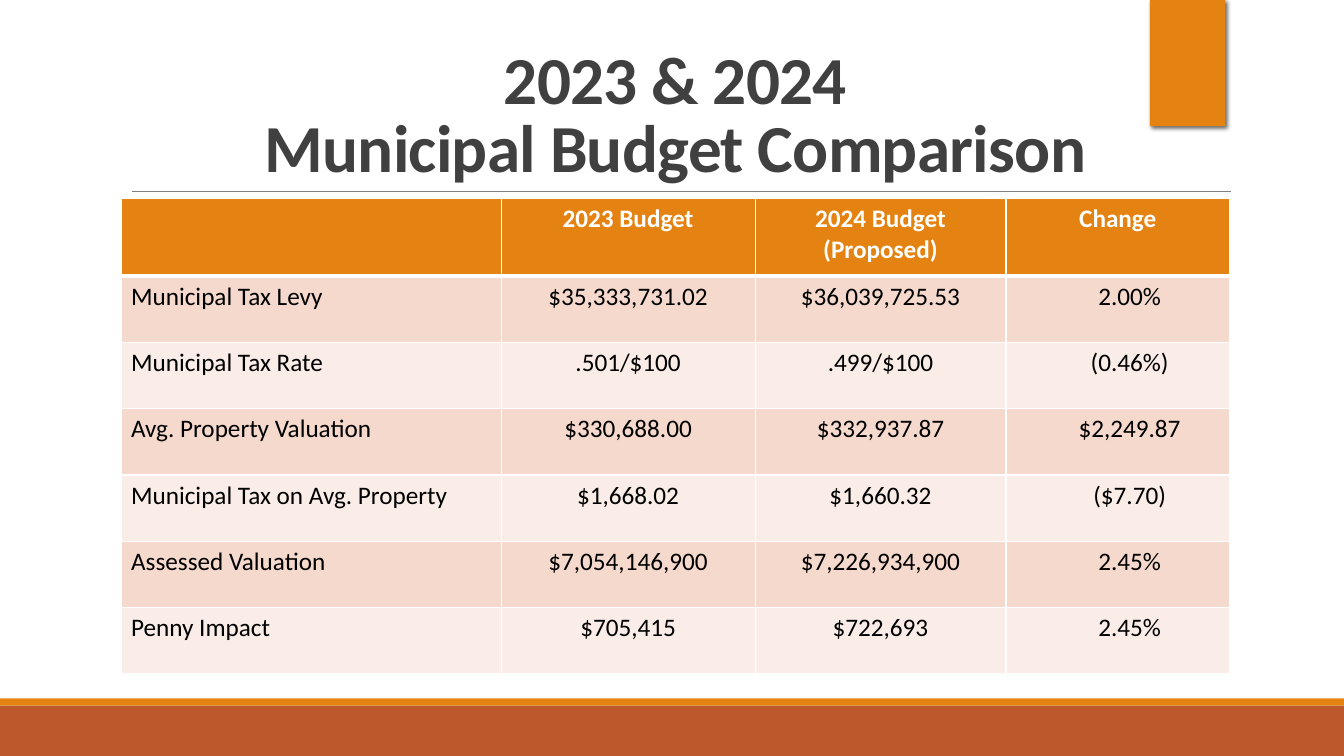
from dataclasses import dataclass

from lxml.etree import SubElement
from pptx import Presentation
from pptx.dml.color import RGBColor
from pptx.enum.shapes import MSO_CONNECTOR, MSO_SHAPE
from pptx.enum.text import MSO_ANCHOR, MSO_AUTO_SIZE, PP_ALIGN
from pptx.oxml import parse_xml
from pptx.oxml.ns import nsdecls, qn
from pptx.util import Cm, Pt


@dataclass(frozen=True)
class Theme:
    font: str = "Calibri"
    orange: str = "E48312"
    rust: str = "BD582C"
    rule: str = "808080"
    title: str = "404040"
    white: str = "FFFFFF"
    black: str = "000000"
    bands: tuple = ("F5D9CC", "FAEDE7")
    title_size: int = 48
    table_size: int = 18


theme = Theme()


def add_run(paragraph, text, size, color, bold):
    run = paragraph.add_run()
    run.text = text
    run.font.name = theme.font
    run.font.size = Pt(size)
    run.font.bold = bold
    run.font.color.rgb = RGBColor.from_string(color)
    return run


def add_border(cell, side, width):
    cell._tc.get_or_add_tcPr().append(parse_xml(
        f'<a:{side} {nsdecls("a")} w="{Pt(width)}"><a:solidFill>'
        f'<a:srgbClr val="{theme.white}"/></a:solidFill></a:{side}>'
    ))


presentation = Presentation()
presentation.slide_width = Cm(33.87)
presentation.slide_height = Cm(19.05)
slide = presentation.slides.add_slide(presentation.slide_layouts[5])

blocks = [
    (0, 17.78, 33.87, 1.27, theme.rust),
    (0, 17.6, 33.87, 0.18, theme.orange),
    (28.98, 0, 1.9, 3.18, theme.orange),
]
for left, top, width, height, color in blocks:
    block = slide.shapes.add_shape(
        MSO_SHAPE.RECTANGLE, Cm(left), Cm(top), Cm(width), Cm(height))
    block.shadow.inherit = False
    block.fill.solid()
    block.fill.fore_color.rgb = RGBColor.from_string(color)
    block.line.fill.background()

corner_tab = block
effects = corner_tab._element.spPr.find(qn("a:effectLst"))
effects.append(parse_xml(
    f'<a:outerShdw {nsdecls("a")} blurRad="{Pt(3)}" dist="{Pt(2)}" dir="2700000">'
    f'<a:srgbClr val="{theme.black}"><a:alpha val="60000"/></a:srgbClr></a:outerShdw>'
))

title_rule = slide.shapes.add_connector(
    MSO_CONNECTOR.STRAIGHT, Cm(3.33), Cm(4.83), Cm(31.01), Cm(4.83))
title_rule.line.color.rgb = RGBColor.from_string(theme.rule)
title_rule.line.width = Pt(0.5)
SubElement(title_rule._element.spPr, qn("a:effectLst"))

title = slide.shapes.title
title.left, title.top, title.width, title.height = Cm(3.05), Cm(0.79), Cm(27.94), Cm(4.04)
title.text_frame.auto_size = MSO_AUTO_SIZE.NONE
title.text_frame.word_wrap = True
title.text_frame.vertical_anchor = MSO_ANCHOR.BOTTOM
paragraph = title.text_frame.paragraphs[0]
paragraph.alignment = PP_ALIGN.CENTER
paragraph.line_spacing = 0.85
for index, text in enumerate(["2023 & 2024", "Municipal Budget Comparison"]):
    if index:
        paragraph.add_line_break()
    run = add_run(paragraph, text, theme.title_size, theme.title, True)
    run.font._element.set("spc", "-50")

rows = [
    ["", "2023 Budget", "2024 Budget\n(Proposed)", "Change"],
    ["Municipal Tax Levy", "$35,333,731.02", "$36,039,725.53", "2.00%"],
    ["Municipal Tax Rate", ".501/$100", ".499/$100", "(0.46%)"],
    ["Avg. Property Valuation", "$330,688.00", "$332,937.87", "$2,249.87"],
    ["Municipal Tax on Avg. Property", "$1,668.02", "$1,660.32", "($7.70)"],
    ["Assessed Valuation", "$7,054,146,900", "$7,226,934,900", "2.45%"],
    ["Penny Impact", "$705,415", "$722,693", "2.45%"],
]
column_widths = [9.58, 6.4, 6.32, 5.64]
header_height, row_height = 1.96, 1.67
change_column = len(column_widths) - 1

table = slide.shapes.add_table(
    len(rows), len(column_widths), Cm(3.05), Cm(5), Cm(sum(column_widths)),
    Cm(header_height + row_height * (len(rows) - 1))).table
for column, width in zip(table.columns, column_widths):
    column.width = Cm(width)

for row_index, values in enumerate(rows):
    is_header = row_index == 0
    table.rows[row_index].height = Cm(header_height if is_header else row_height)
    fill_color = theme.orange if is_header else theme.bands[(row_index - 1) % 2]
    text_color = theme.white if is_header else theme.black
    for column_index, value in enumerate(values):
        cell = table.cell(row_index, column_index)
        for side in ("lnL", "lnR"):
            add_border(cell, side, 1)
        add_border(cell, "lnT", 3 if row_index == 1 else 1)
        add_border(cell, "lnB", 3 if is_header else 1)
        cell.fill.solid()
        cell.fill.fore_color.rgb = RGBColor.from_string(fill_color)
        if column_index == change_column and not is_header:
            cell.margin_left = Cm(0.85)
        for line_index, text in enumerate(value.splitlines()):
            frame = cell.text_frame
            paragraph = frame.add_paragraph() if line_index else frame.paragraphs[0]
            paragraph.alignment = PP_ALIGN.CENTER if column_index else PP_ALIGN.LEFT
            add_run(paragraph, text, theme.table_size, text_color, is_header)

presentation.save("out.pptx")
